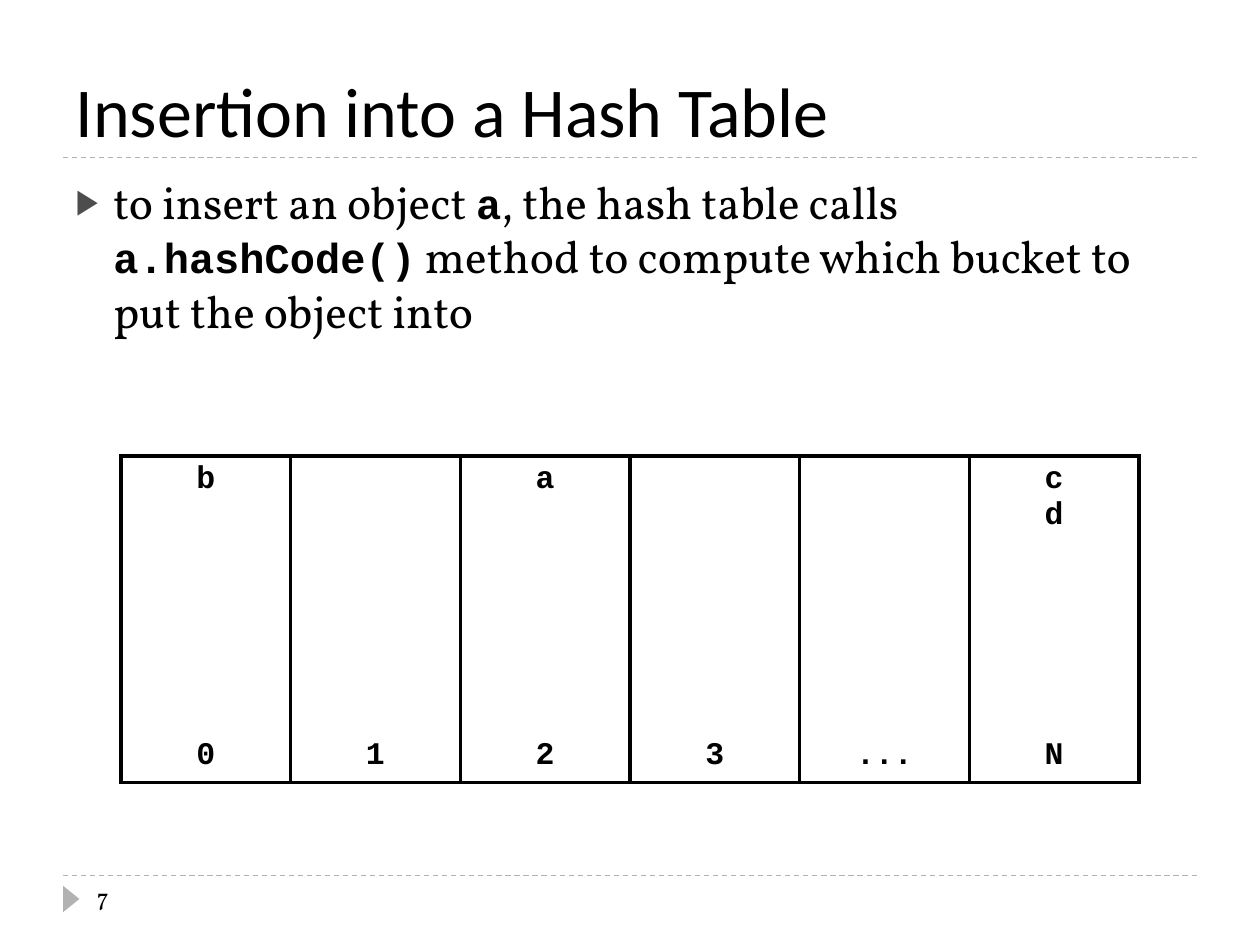
from lxml.etree import SubElement
from pptx import Presentation
from pptx.dml.color import RGBColor
from pptx.enum.dml import MSO_LINE
from pptx.enum.shapes import MSO_CONNECTOR, MSO_SHAPE
from pptx.enum.text import MSO_ANCHOR, MSO_AUTO_SIZE, PP_ALIGN
from pptx.oxml import parse_xml
from pptx.oxml.ns import nsdecls, qn
from pptx.util import Inches, Pt

BLACK, WHITE, GRAY, BULLET_GRAY = "000000", "FFFFFF", "B2B2B2", "4D4D4D"
TITLE = {"name": "Calibri", "size": Pt(40)}
PROSE = {"name": "Vollkorn", "size": Pt(26), "bold": False}
CODE = {"name": "Courier New", "size": Pt(24), "bold": True}
CELL = {**CODE, "size": Pt(18)}
NUMBER = {"name": "Vollkorn", "size": Pt(14)}


def color(value):
    return RGBColor.from_string(value)


class SlideBuilder:
    """Hold the style and the current slide, and add each kind of element."""

    def __init__(self, presentation):
        self.slide = presentation.slides.add_slide(presentation.slide_layouts[1])

    def place(self, shape, left, top, width, height):
        box = {"left": left, "top": top, "width": width, "height": height}
        for name, value in box.items():
            setattr(shape, name, Inches(value))

    def add_text(self, paragraph, text, style):
        run = paragraph.add_run()
        run.text = text
        for name, value in style.items():
            setattr(run.font, name, value)
        run.font.color.rgb = color(BLACK)

    def rule(self, top):
        line = self.slide.shapes.add_connector(
            MSO_CONNECTOR.STRAIGHT, Inches(0.5), Inches(top), Inches(9.5), Inches(top))
        line.line.color.rgb = color(GRAY)
        line.line.width = Pt(0.75)
        line.line.dash_style = MSO_LINE.DASH
        SubElement(line._element.spPr, qn("a:effectLst"))

    def marker(self, left, top, width, height):
        shape = self.slide.shapes.add_shape(
            MSO_SHAPE.ISOSCELES_TRIANGLE, Inches(left), Inches(top), Inches(width), Inches(height))
        shape.rotation = 90
        shape.shadow.inherit = False
        shape.fill.solid()
        shape.fill.fore_color.rgb = color(GRAY)
        shape.line.fill.background()

    def title(self, text):
        shape = self.slide.shapes.title
        self.place(shape, 0.5, 0.17, 9, 1.08)
        frame = shape.text_frame
        frame.auto_size = MSO_AUTO_SIZE.NONE
        frame.vertical_anchor = MSO_ANCHOR.BOTTOM
        frame.paragraphs[0].alignment = PP_ALIGN.LEFT
        self.add_text(frame.paragraphs[0], text, TITLE)

    def body(self, runs):
        shape = self.slide.placeholders[1]
        self.place(shape, 0.5, 1.33, 9, 5.4)
        shape.text_frame.auto_size = MSO_AUTO_SIZE.NONE
        paragraph = shape.text_frame.paragraphs[0]
        paragraph.space_before = Pt(6)
        for text, style in runs:
            self.add_text(paragraph, text, style)
        self.bullet(paragraph)

    def bullet(self, paragraph):
        properties = paragraph._p.get_or_add_pPr()
        properties.set("marL", str(Inches(0.3)))
        properties.set("indent", str(-Inches(0.3)))
        bullet_color = SubElement(properties, qn("a:buClr"))
        SubElement(bullet_color, qn("a:srgbClr"), val=BULLET_GRAY)
        SubElement(properties, qn("a:buSzPct"), val="76000")
        SubElement(properties, qn("a:buChar"), char="▶")

    def page_number(self, text):
        shape = self.slide.shapes.add_textbox(
            Inches(0.67), Inches(6.95), Inches(2.17), Inches(0.4))
        shape.text_frame.word_wrap = True
        self.add_text(shape.text_frame.paragraphs[0], text, NUMBER)

    def table(self, rows, heights, outer_sides):
        columns = len(rows[0])
        table = self.slide.shapes.add_table(
            len(rows), columns, Inches(0.96), Inches(3.62),
            Inches(8.08), Inches(sum(heights))).table
        table.first_row = table.horz_banding = False
        for column in table.columns:
            column.width = Inches(8.08 / columns)
        for row, texts, height, side in zip(table.rows, rows, heights, outer_sides):
            row.height = Inches(height)
            for cell, text in zip(row.cells, texts):
                self.cell(cell, text, "LR" + side)

    def cell(self, cell, text, sides):
        cell.fill.solid()
        cell.fill.fore_color.rgb = color(WHITE)
        for index, line in enumerate(text.split()):
            frame = cell.text_frame
            paragraph = frame.add_paragraph() if index else frame.paragraphs[0]
            paragraph.alignment = PP_ALIGN.CENTER
            self.add_text(paragraph, line, CELL)
        properties = cell._tc.get_or_add_tcPr()
        solid = f'<a:solidFill><a:srgbClr val="{BLACK}"/></a:solidFill>'
        for index, side in enumerate("LRTB"):
            fill = solid if side in sides else "<a:noFill/>"
            border = f'<a:ln{side} {nsdecls("a")} w="{Pt(2.25)}">{fill}</a:ln{side}>'
            properties.insert(index, parse_xml(border))


def main():
    presentation = Presentation()
    presentation.slide_width, presentation.slide_height = Inches(10), Inches(7.5)
    builder = SlideBuilder(presentation)
    for top in (6.95, 1.25):
        builder.rule(top)
    builder.marker(0.46, 7.07, 0.21, 0.13)
    builder.title("Insertion into a Hash Table")
    builder.page_number("7")
    builder.body([
        ("to insert an object ", PROSE),
        ("a", CODE),
        (", the hash table calls ", PROSE),
        ("a.hashCode()", CODE),
        (" method to compute which bucket to put the object into", PROSE),
    ])
    buckets = ["b", "", "a", "", "", "c d"]
    indexes = ["0", "1", "2", "3", "...", "N"]
    builder.table([buckets, indexes], heights=(2.19, 0.4), outer_sides="TB")
    presentation.save("out.pptx")


if __name__ == "__main__":
    main()
